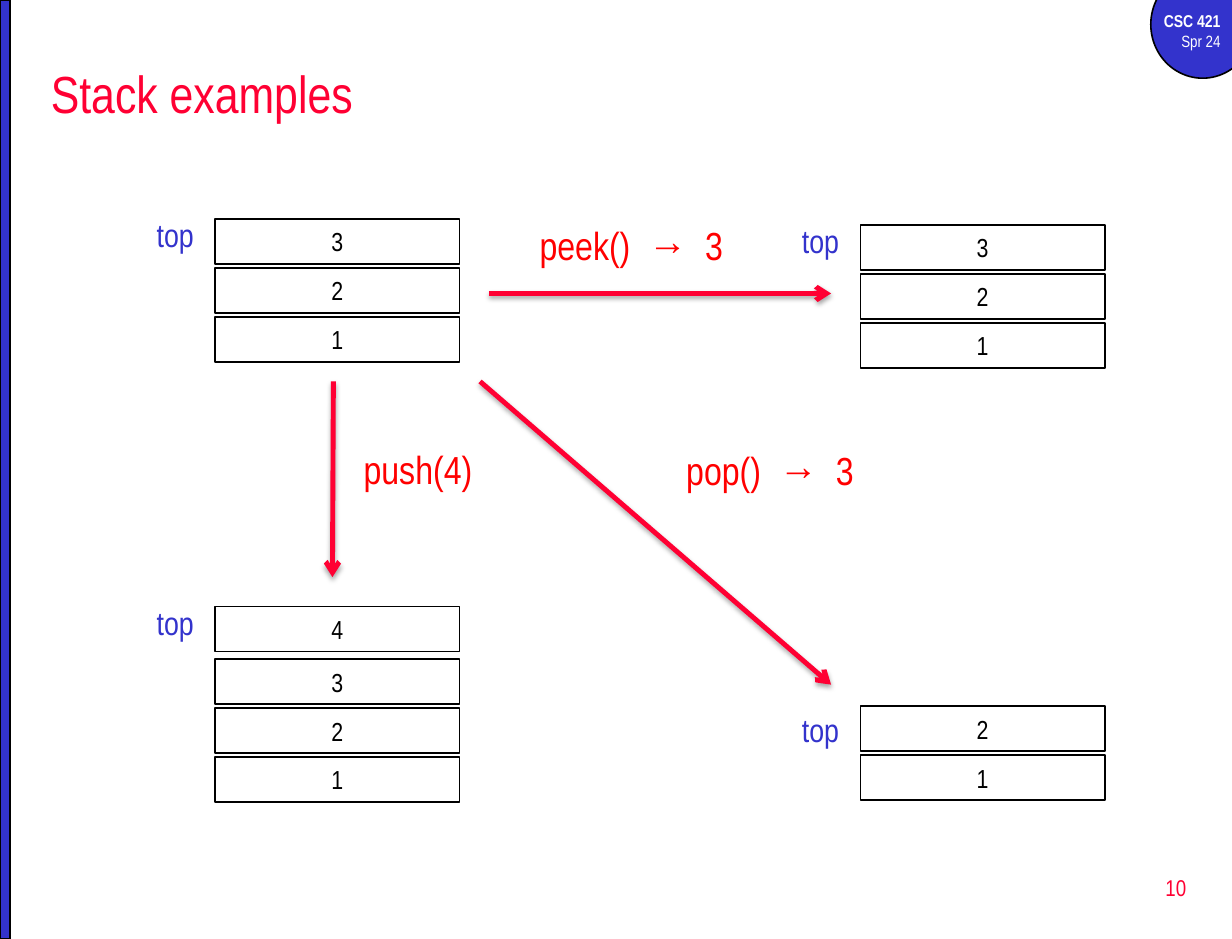
from lxml import etree
from pptx import Presentation
from pptx.dml.color import RGBColor
from pptx.enum.shapes import MSO_CONNECTOR, MSO_SHAPE
from pptx.enum.text import MSO_ANCHOR, PP_ALIGN
from pptx.oxml import parse_xml
from pptx.oxml.ns import nsdecls, qn
from pptx.util import Pt

PX = 7620  # 120 px to the inch
WIDTH, HEIGHT = 1260, 960
BLUE, CRIMSON, RED, BLACK, WHITE = "3333CC", "FF0033", "FF0000", "000000", "FFFFFF"
LEFT, CENTER, RIGHT = PP_ALIGN.LEFT, PP_ALIGN.CENTER, PP_ALIGN.RIGHT

TITLE = "Stack examples"
PAGE_NUMBER = "10"
COURSE = [("CSC 421", 10.5, True), ("Spr 24", 10, False)]

# left, top of each cell run with its values, top of the "top" label
STACKS = [
    (220, [(224, "321")], 214),
    (880, [(722, "21")], 720),
    (220, [(620, "4"), (674, "321")], 610),
    (880, [(230, "321")], 220),
]
OPERATIONS = [
    # text, text box, arrow start, arrow end
    ("peek()  →  3", (540, 220, 230, 61), (500, 300), (850, 300)),
    ("push(4)", (360, 449, 140, 61), (341, 390), (340, 590)),
    ("pop()  →  3", (690, 450, 230, 61), (491, 390), (850, 700)),
]
CELL_WIDTH, CELL_HEIGHT, CELL_STEP = 250, 46, 50
LABEL_OFFSET, LABEL_WIDTH, LABEL_HEIGHT = 90, 80, 52

SHADOW = (
    f'<a:effectLst {nsdecls("a")}><a:outerShdw blurRad="39370" dist="22860" dir="5400000" '
    'rotWithShape="0"><a:srgbClr val="000000"><a:alpha val="35000"/></a:srgbClr>'
    "</a:outerShdw></a:effectLst>"
)


def color(code):
    return RGBColor.from_string(code)


def px(*lengths):
    return [length * PX for length in lengths]


def write(frame, lines, code, align=LEFT, **frame_format):
    """Fill a text frame with (text, size, bold) lines."""
    for name, value in {"word_wrap": True, **frame_format}.items():
        setattr(frame, name, value)
    for index, (text, size, bold) in enumerate(lines):
        paragraph = frame.add_paragraph() if index else frame.paragraphs[0]
        paragraph.alignment = align
        run = paragraph.add_run()
        run.text = text
        font_format = {"name": "Arial Narrow", "size": Pt(size), "bold": bold}
        for name, value in font_format.items():
            setattr(run.font, name, value)
        run.font.color.rgb = color(code)


def add_text(shapes, box, lines, code, align=LEFT, **frame_format):
    frame = shapes.add_textbox(*px(*box)).text_frame
    write(frame, lines, code, align, **frame_format)


def add_outlined(shapes, kind, box, fill=None):
    shape = shapes.add_shape(kind, *px(*box))
    shape.shadow.inherit = False
    if fill:
        shape.fill.solid()
        shape.fill.fore_color.rgb = color(fill)
    else:
        shape.fill.background()
    shape.line.color.rgb = color(BLACK)
    shape.line.width = Pt(1)
    return shape


def add_stack(shapes, left, cell_runs, label_top):
    stack = shapes.add_group_shape().shapes
    for top, values in cell_runs:
        for row, value in enumerate(values):
            box = (left, top + row * CELL_STEP, CELL_WIDTH, CELL_HEIGHT)
            cell = add_outlined(stack, MSO_SHAPE.RECTANGLE, box)
            write(cell.text_frame, [(value, 16, False)], BLACK, CENTER,
                  vertical_anchor=MSO_ANCHOR.MIDDLE)
    label_box = (left - LABEL_OFFSET, label_top, LABEL_WIDTH, LABEL_HEIGHT)
    add_text(stack, label_box, [("top", 20, False)], BLUE, RIGHT)


def add_arrow(shapes, start, end):
    arrow = shapes.add_connector(MSO_CONNECTOR.STRAIGHT, *px(*start, *end))
    arrow.line.color.rgb = color(CRIMSON)
    arrow.line.width = Pt(3)
    etree.SubElement(arrow.line._get_or_add_ln(), qn("a:tailEnd"), type="arrow")
    arrow._element.spPr.append(parse_xml(SHADOW))


def main():
    prs = Presentation()
    prs.slide_width, prs.slide_height = px(WIDTH, HEIGHT)
    slide = prs.slides.add_slide(prs.slide_layouts[5])
    shapes = slide.shapes

    add_outlined(shapes, MSO_SHAPE.OVAL, (1177, -30, 106, 110), BLUE)
    add_text(shapes, (1160, 5, 100, 55), COURSE, WHITE, RIGHT)
    add_outlined(shapes, MSO_SHAPE.RECTANGLE, (0, 0, 10, HEIGHT), BLUE)
    add_text(shapes, (962, 875, 263, 64), [(PAGE_NUMBER, 14, False)], CRIMSON, RIGHT,
             vertical_anchor=MSO_ANCHOR.MIDDLE)

    title = shapes.title
    title.left, title.top, title.width, title.height = px(40, 50, 1190, 90)
    write(title.text_frame, [(TITLE, 32, False)], CRIMSON,
          vertical_anchor=MSO_ANCHOR.MIDDLE)

    for stack in STACKS:
        add_stack(shapes, *stack)
    for text, box, start, end in OPERATIONS:
        add_text(shapes, box, [(text, 24, False)], RED)
        add_arrow(shapes, start, end)

    prs.save("out.pptx")


if __name__ == "__main__":
    main()
